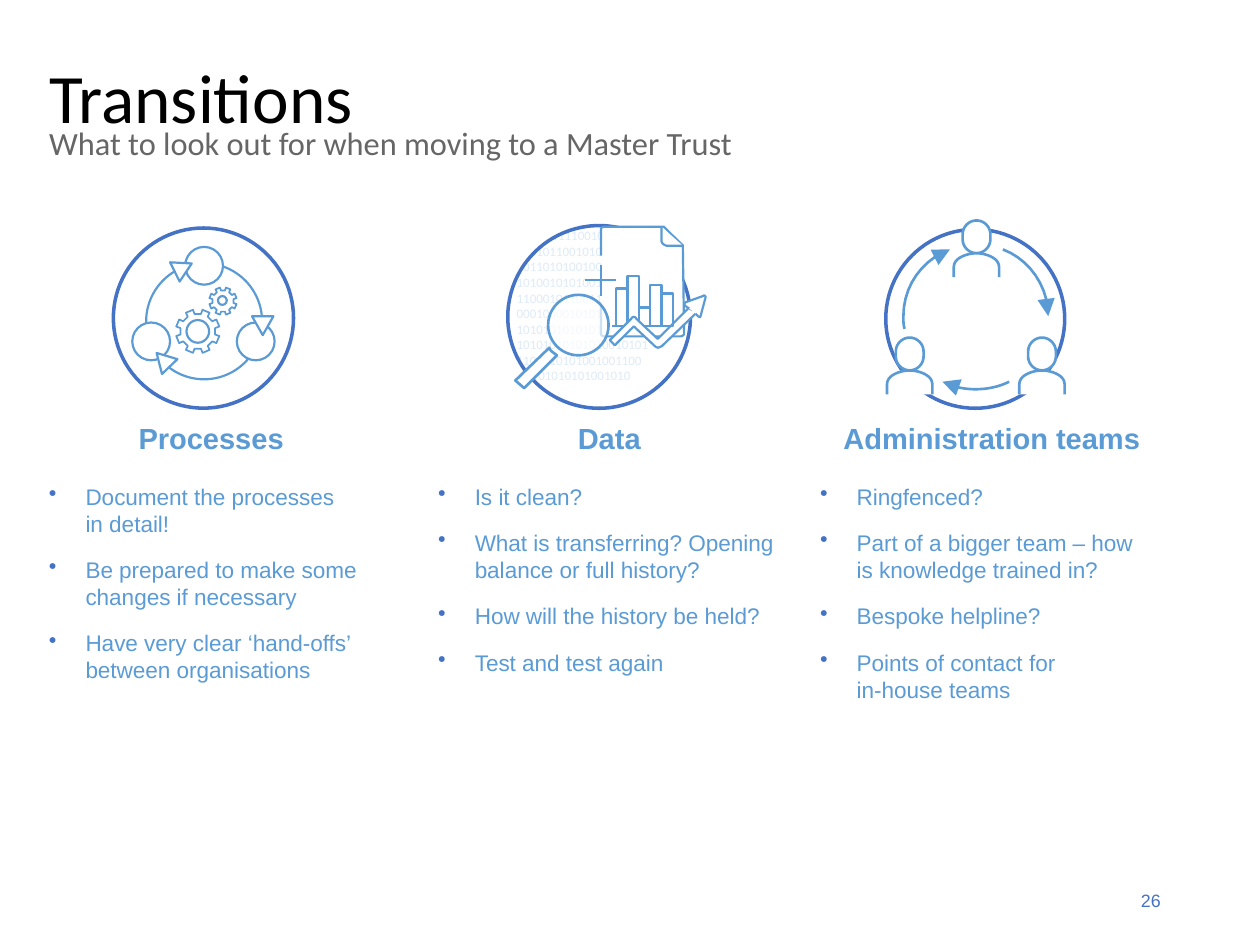
from dataclasses import dataclass
from math import cos, radians, sin

from lxml import etree
from pptx import Presentation
from pptx.dml.color import RGBColor
from pptx.enum.shapes import MSO_CONNECTOR, MSO_SHAPE
from pptx.enum.text import MSO_ANCHOR, MSO_AUTO_SIZE, PP_ALIGN
from pptx.oxml.ns import qn
from pptx.util import Inches, Pt

OVAL, RECT, TRIANGLE = MSO_SHAPE.OVAL, MSO_SHAPE.RECTANGLE, MSO_SHAPE.ISOSCELES_TRIANGLE
STRAIGHT = MSO_CONNECTOR.STRAIGHT
MIDDLE = MSO_ANCHOR.MIDDLE
LEFT, CENTER, RIGHT = PP_ALIGN.LEFT, PP_ALIGN.CENTER, PP_ALIGN.RIGHT
NO_AUTOFIT = MSO_AUTO_SIZE.NONE
COLORS = {"ring": "4472C4", "icon": "5B9BD5", "digits": "DEEBF7",
          "white": "FFFFFF", "title": "000000", "subtitle": "666666"}


@dataclass
class Column:
    heading: str
    heading_left: float
    heading_width: float
    list_left: float
    list_width: float
    items: list[str]


@dataclass
class Person:
    cx: float
    top: float


COLUMNS = [
    Column("Processes", 0.99, 1.37, 0.29, 2.75, [
        "Document the processes \vin detail!",
        "Be prepared to make some changes if necessary",
        "Have very clear ‘hand-offs’ between organisations"]),
    Column("Data", 4.48, 0.71, 3.38, 2.9, [
        "Is it clean?", "What is transferring? Opening balance or full history?",
        "How will the history be held?", "Test and test again"]),
    Column("Administration teams", 6.58, 2.58, 6.41, 2.75, [
        "Ringfenced?", "Part of a bigger team – how is knowledge trained in?",
        "Bespoke helpline?", "Points of contact for \vin-house teams"]),
]
DIGITS = ["0010111001010010", "000101100101000010", "10110101001000101010",
          "1010010101001010010110", "1100010110011010111000",
          "0001000010101101010101", "101010101010100100101",
          "10101010101010010101", "1101010101001001100", "101010101001010"]
INDENTED_ROWS = (0, len(DIGITS) - 1)
PEOPLE = [Person(7.75, 1.75), Person(7.22, 2.68), Person(8.27, 2.68)]
TEAM_ARROWS = [
    [(7.18, 2.61), (7.17, 2.58, 7.17, 2.55, 7.17, 2.51), (7.17, 2.27, 7.32, 2.06, 7.54, 1.98)],
    [(8.01, 3.03), (7.93, 3.07, 7.84, 3.09, 7.74, 3.09), (7.65, 3.09, 7.56, 3.07, 7.48, 3.03)],
    [(7.96, 1.98), (8.17, 2.06, 8.32, 2.27, 8.32, 2.51)],
]
BAR_HEIGHTS = [0.3, 0.4, 0.15, 0.33, 0.26]
DOCUMENT = [(4.77, 2.03), (4.77, 1.82), (4.77, 1.81, 4.78, 1.8, 4.8, 1.8), (5.25, 1.8),
            (5.26, 1.8, 5.27, 1.8, 5.27, 1.8), (5.41, 1.94), (5.42, 1.94, 5.42, 1.95, 5.42, 1.96),
            (5.43, 2.65), (5.43, 2.66, 5.41, 2.67, 5.4, 2.67), (4.8, 2.67),
            (4.78, 2.67, 4.77, 2.66, 4.77, 2.65), (4.77, 2.42)]
FOLD = [(5.25, 1.8), (5.25, 1.91), (5.25, 1.91, 5.25, 1.94, 5.29, 1.95), (5.42, 1.95)]
TREND = [(5.52, 2.49), (5.25, 2.75), (5.24, 2.75, 5.23, 2.76, 5.22, 2.76), (5.2, 2.75),
         (5.03, 2.59), (4.89, 2.73), (4.89, 2.74, 4.87, 2.74, 4.87, 2.73), (4.85, 2.71),
         (4.85, 2.71, 4.84, 2.7, 4.84, 2.7), (4.85, 2.69), (5.01, 2.53),
         (5.02, 2.51, 5.04, 2.51, 5.05, 2.53), (5.22, 2.69), (5.46, 2.45)]
TREND_HEAD = [(5.47, 2.45), (5.44, 2.43), (5.43, 2.42, 5.43, 2.41, 5.44, 2.4), (5.58, 2.35),
              (5.59, 2.34, 5.6, 2.35, 5.6, 2.36), (5.56, 2.51),
              (5.56, 2.52, 5.55, 2.52, 5.54, 2.51), (5.52, 2.49)]
HANDLE = [(4.36, 2.76), (4.36, 2.77, 4.37, 2.78, 4.38, 2.79), (4.42, 2.82),
          (4.16, 3.08), (4.09, 3.02)]


def rgb(name: str) -> RGBColor:
    return RGBColor.from_string(COLORS[name])


def style(sp, fill: str | None, line: str, weight: float) -> None:
    sp.shadow.inherit = False
    if fill:
        sp.fill.solid()
        sp.fill.fore_color.rgb = rgb(fill)
    else:
        sp.fill.background()
    sp.line.color.rgb = rgb(line)
    sp.line.width = Pt(weight)


def add_preset(s, kind, x: float, y: float, w: float, h: float, fill: str | None = None,
               line: str = "icon", weight: float = 1.25, rotation: float = 0):
    sp = s.shapes.add_shape(kind, Inches(x), Inches(y), Inches(w), Inches(h))
    sp.rotation = rotation
    style(sp, fill, line, weight)
    return sp


def add_outline(s, segments: list[tuple], fill: str | None = "white",
                weight: float = 1.25, close: bool = False):
    points = [segments[0]]
    for seg in segments[1:]:
        if len(seg) == 2:
            points.append(seg)
            continue
        controls = [points[-1], seg[:2], seg[2:4], seg[4:]]
        for t in (i / 10 for i in range(1, 11)):
            weights = ((1 - t) ** 3, 3 * t * (1 - t) ** 2, 3 * t * t * (1 - t), t ** 3)
            points.append(tuple(sum(k * c[axis] for k, c in zip(weights, controls))
                                for axis in (0, 1)))
    emu = [(Inches(x), Inches(y)) for x, y in points]
    builder = s.shapes.build_freeform(*emu[0])
    builder.add_line_segments(emu[1:], close=close)
    sp = builder.convert_to_shape()
    style(sp, fill, "icon", weight)
    return sp


def add_line(s, x1: float, y1: float, x2: float, y2: float) -> None:
    line = s.shapes.add_connector(STRAIGHT, Inches(x1), Inches(y1), Inches(x2), Inches(y2))
    line.line.color.rgb = rgb("icon")
    line.line.width = Pt(1.25)
    etree.SubElement(line._element.spPr, qn("a:effectLst"))


def add_gear(s, cx: float, cy: float, tip: float, root: float, teeth: int = 8) -> None:
    profile = ((-12, root), (-10, tip), (10, tip), (12, root))
    angles = [(360 * (i + 0.5) / teeth + a, r) for i in range(teeth) for a, r in profile]
    points = [(cx + r * cos(radians(a)), cy + r * sin(radians(a))) for a, r in angles]
    add_outline(s, points, None, 1, close=True)


def add_person(s, person: Person) -> None:
    x, y = person.cx, person.top
    head = [(x, y + 0.26), (x + 0.06, y + 0.26, x + 0.11, y + 0.21, x + 0.11, y + 0.15),
            (x + 0.11, y + 0.11), (x + 0.11, y + 0.05, x + 0.06, y, x, y),
            (x - 0.06, y, x - 0.11, y + 0.05, x - 0.11, y + 0.11), (x - 0.11, y + 0.15),
            (x - 0.11, y + 0.21, x - 0.06, y + 0.26, x, y + 0.26)]
    body = [(x + 0.18, y + 0.45), (x + 0.18, y + 0.37),
            (x + 0.18, y + 0.29, x + 0.06, y + 0.26, x, y + 0.26),
            (x - 0.06, y + 0.26, x - 0.18, y + 0.29, x - 0.18, y + 0.37), (x - 0.18, y + 0.45)]
    add_outline(s, head, weight=1.5, close=True)
    add_outline(s, body, weight=1.5)


def add_bars(s, first: int, last: int) -> None:
    for i in range(first, last):
        h = BAR_HEIGHTS[i]
        add_preset(s, RECT, 4.89 + 0.09 * i, 2.59 - h, 0.09, h)


def set_font(p, size: float, color: str, name: str = "Arial", bold: bool = False) -> None:
    p.font.size, p.font.name, p.font.bold = Pt(size), name, bold
    p.font.color.rgb = rgb(color)


def set_indent(p, left: float, first: float) -> None:
    pPr = p._p.get_or_add_pPr()
    pPr.set("marL", str(Inches(left)))
    pPr.set("indent", str(Inches(first)))


def add_text(s, x: float, y: float, w: float, h: float, lines: list[str], size: float,
             color: str, name: str = "Arial", bold: bool = False, align=LEFT):
    tf = s.shapes.add_textbox(Inches(x), Inches(y), Inches(w), Inches(h)).text_frame
    tf.word_wrap = True
    for i, line in enumerate(lines):
        p = tf.add_paragraph() if i else tf.paragraphs[0]
        p.text, p.alignment = line, align
        set_font(p, size, color, name, bold)
    return tf


def fill_placeholder(sp, y: float, h: float, text: str, size: float, color: str):
    sp.left, sp.top, sp.width, sp.height = Inches(0.29), Inches(y), Inches(9.43), Inches(h)
    tf = sp.text_frame
    tf.auto_size = NO_AUTOFIT
    p = tf.paragraphs[0]
    p.text, p.alignment, p.line_spacing = text, LEFT, 0.9
    set_font(p, size, color, "Calibri")
    return tf


def add_column(s, column: Column) -> None:
    tf = add_text(s, column.heading_left, 3.29, column.heading_width, 0.38,
                  [column.heading], 16.6, "icon", bold=True, align=CENTER)
    tf.word_wrap = False
    tf = add_text(s, column.list_left, 3.78, column.list_width, 1.75, column.items, 12.9, "icon")
    for p in tf.paragraphs:
        p.space_before = p.space_after = Pt(5.5)
        set_indent(p, 0.29, -0.29)
        pPr = p._p.pPr
        bullet = etree.Element(qn("a:buChar"), char="•")
        color = etree.Element(qn("a:buClr"))
        etree.SubElement(color, qn("a:srgbClr"), val=COLORS["ring"])
        pPr.insert(2, color)
        pPr.insert(3, bullet)


def draw_processes(s) -> None:
    add_preset(s, OVAL, 0.9, 1.81, 1.43, 1.43, line="ring", weight=2)
    add_gear(s, 1.57, 2.63, 0.175, 0.14)
    add_gear(s, 1.77, 2.39, 0.11, 0.085)
    add_preset(s, OVAL, 1.16, 2.09, 0.92, 0.92)
    for x, y in ((1.47, 1.96), (1.05, 2.56), (1.88, 2.56)):
        add_preset(s, OVAL, x, y, 0.3, 0.3, "white")
    for x, y, turn in ((1.37, 2.05, 63.5), (2, 2.51, 180), (1.21, 2.78, 316.2)):
        add_preset(s, TRIANGLE, x, y, 0.17, 0.15, "white", rotation=turn)
    for x, y, d in ((1.48, 2.54, 0.18), (1.73, 2.35, 0.07)):
        add_preset(s, OVAL, x, y, d, d, "white")


def draw_data(s) -> None:
    tf = add_text(s, 4.1, 1.81, 1.35, 1.53, DIGITS, 7.4, "digits", "Calibri")
    tf.margin_left = tf.margin_right = tf.margin_top = tf.margin_bottom = 0
    for row in INDENTED_ROWS:
        set_indent(tf.paragraphs[row], 0.12, 0)
    add_preset(s, OVAL, 3.92, 1.62, 1.82, 1.83, line="white", weight=18.25)
    add_preset(s, OVAL, 4.03, 1.79, 1.45, 1.45, line="ring", weight=2)
    add_outline(s, DOCUMENT)
    for ends in ((4.86, 2.59, 5.33, 2.59), (4.77, 2.1, 4.77, 2.35), (4.64, 2.22, 4.89, 2.22)):
        add_line(s, *ends)
    add_outline(s, FOLD)
    add_bars(s, 0, 3)
    add_outline(s, TREND)
    add_outline(s, TREND_HEAD)
    add_bars(s, 3, 5)
    add_outline(s, HANDLE, weight=1.5, close=True)
    lens = add_preset(s, OVAL, 4.35, 2.34, 0.48, 0.48, "white", weight=1.5)
    color = lens._element.spPr.find(qn("a:solidFill")).find(qn("a:srgbClr"))
    etree.SubElement(color, qn("a:alpha"), val="70000")


def draw_teams(s) -> None:
    add_preset(s, OVAL, 7.03, 1.82, 1.42, 1.42, line="ring", weight=2)
    for person in PEOPLE:
        add_person(s, person)
    for curve in TEAM_ARROWS:
        sp = add_outline(s, curve, None, 1.5)
        etree.SubElement(sp.line._get_or_add_ln(), qn("a:tailEnd"),
                         type="triangle", w="lg", len="lg")


def main() -> None:
    prs = Presentation()
    prs.slide_width, prs.slide_height = Inches(10), Inches(7.5)
    s = prs.slides.add_slide(prs.slide_layouts[1])
    tf = fill_placeholder(s.shapes.title, 0.65, 0.3, "Transitions", 39.6, "title")
    tf.vertical_anchor = MIDDLE
    tf = fill_placeholder(s.placeholders[1], 0.96, 0.36,
                          "What to look out for when moving to a Master Trust", 18.5, "subtitle")
    p = tf.paragraphs[0]
    p.space_before = Pt(10)
    set_indent(p, 0, 0)
    etree.SubElement(p._p.pPr, qn("a:buNone"))
    tf = add_text(s, 7.06, 6.95, 2.25, 0.4, ["26"], 10.2, "ring", align=RIGHT)
    tf.vertical_anchor = MIDDLE
    for draw, column in zip((draw_processes, draw_data, draw_teams), COLUMNS):
        draw(s)
        add_column(s, column)
    prs.save("out.pptx")


if __name__ == "__main__":
    main()
